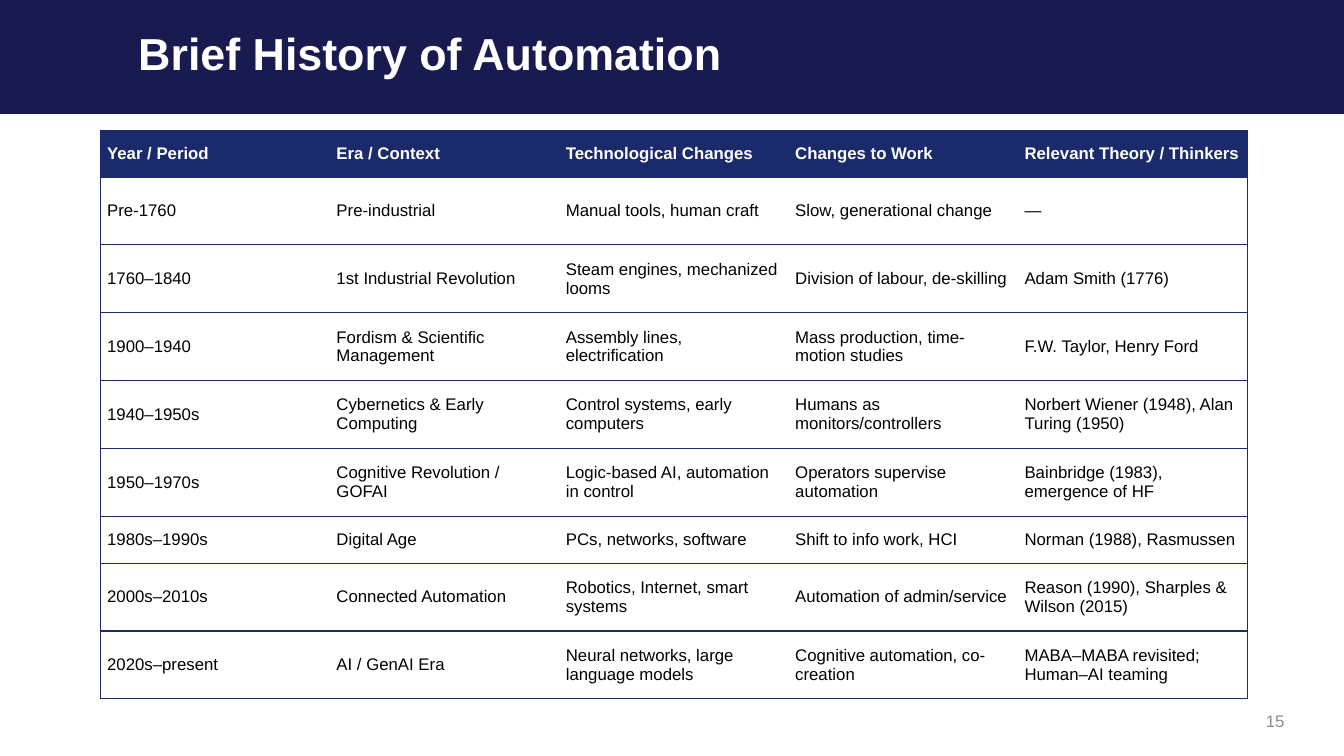
import pptx
import pptx.dml.color
import pptx.enum.shapes
import pptx.enum.text
import pptx.oxml.ns
import pptx.util
from lxml import etree

Cm = pptx.util.Cm
Pt = pptx.util.Pt
ALIGN = pptx.enum.text.PP_ALIGN
MIDDLE = pptx.enum.text.MSO_ANCHOR.MIDDLE
qn = pptx.oxml.ns.qn

NAVY, BLUE, WHITE, BLACK, GREY = "191A4F", "1B2A6B", "FFFFFF", "000000", "8C8C8C"
WIDTH, HEIGHT, BAND = Cm(33.87), Cm(19.05), Cm(2.87)
WIDE, SHORT, TALL = Cm(5.78), Cm(1.18), Cm(1.71)

ROWS = [
    ("Year / Period", "Era / Context", "Technological Changes",
     "Changes to Work", "Relevant Theory / Thinkers"),
    ("Pre-1760", "Pre-industrial", "Manual tools, human craft",
     "Slow, generational change", "—"),
    ("1760–1840", "1st Industrial Revolution", "Steam engines, mechanized looms",
     "Division of labour, de-skilling", "Adam Smith (1776)"),
    ("1900–1940", "Fordism & Scientific Management", "Assembly lines, electrification",
     "Mass production, time-motion studies", "F.W. Taylor, Henry Ford"),
    ("1940–1950s", "Cybernetics & Early Computing", "Control systems, early computers",
     "Humans as monitors/controllers", "Norbert Wiener (1948), Alan Turing (1950)"),
    ("1950–1970s", "Cognitive Revolution / GOFAI", "Logic-based AI, automation in control",
     "Operators supervise automation", "Bainbridge (1983), emergence of HF"),
    ("1980s–1990s", "Digital Age", "PCs, networks, software",
     "Shift to info work, HCI", "Norman (1988), Rasmussen"),
    ("2000s–2010s", "Connected Automation", "Robotics, Internet, smart systems",
     "Automation of admin/service", "Reason (1990), Sharples & Wilson (2015)"),
    ("2020s–present", "AI / GenAI Era", "Neural networks, large language models",
     "Cognitive automation, co-creation", "MABA–MABA revisited; Human–AI teaming"),
]
SHORT_ROWS = (0, 6)


def apply(item, values):
    for name, value in values.items():
        setattr(item, name, value)


def paint(fill, shade):
    fill.solid()
    fill.fore_color.rgb = pptx.dml.color.RGBColor.from_string(shade)


def write(frame, text, size, shade, bold=False, **form):
    frame.text = text
    line = frame.paragraphs[0]
    apply(line, form)
    font = line.runs[0].font
    apply(font, {"name": "Arial", "size": Pt(size), "bold": bold})
    paint(font.fill, shade)


def add_band(slide):
    band = slide.shapes.add_shape(
        pptx.enum.shapes.MSO_SHAPE.RECTANGLE, 0, 0, WIDTH, BAND)
    band.shadow.inherit = False
    paint(band.fill, NAVY)
    band.line.fill.background()
    slide.shapes.title.element.addprevious(band.element)


def add_title(slide, text):
    title = slide.shapes.title
    apply(title, {"left": Cm(3.23), "top": Cm(-0.03),
                  "width": Cm(29.39), "height": BAND})
    apply(title.text_frame, {"vertical_anchor": MIDDLE, "word_wrap": True,
                             "auto_size": pptx.enum.text.MSO_AUTO_SIZE.NONE})
    write(title.text_frame, text, 32, WHITE, True,
          alignment=ALIGN.LEFT, line_spacing=0.9)


def add_number(slide, text):
    box = slide.shapes.add_textbox(Cm(24.54), Cm(17.65), Cm(8.08), Cm(1.02))
    apply(box.text_frame, {"vertical_anchor": MIDDLE, "word_wrap": True})
    write(box.text_frame, text, 12, GREY, alignment=ALIGN.RIGHT)


def add_edge(props, side, shown):
    edge = etree.SubElement(props, qn("a:ln" + side), w=str(Pt(1)))
    if shown:
        fill = etree.SubElement(edge, qn("a:solidFill"))
        etree.SubElement(fill, qn("a:srgbClr"), val=BLUE)
    else:
        etree.SubElement(edge, qn("a:noFill"))


def add_grid(slide, rows):
    count = len(rows[0])
    frame = slide.shapes.add_table(len(rows), count, Cm(2.54), Cm(3.28),
                                   WIDE * count, SHORT * len(rows))
    table = frame.table
    apply(table, {"first_row": False, "horz_banding": False})
    for col in table.columns:
        col.width = WIDE
    for index, row in enumerate(table.rows):
        row.height = SHORT if index in SHORT_ROWS else TALL
    nodes = frame.element.iter(qn("a:tc"))
    for index, (cell, node) in enumerate(zip(table.iter_cells(), nodes)):
        row, col = divmod(index, count)
        head = row == 0
        props = node.get_or_add_tcPr()
        sides = {"L": col == 0, "R": col == count - 1, "T": True, "B": True}
        for side, shown in sides.items():
            add_edge(props, side, shown)
        paint(cell.fill, BLUE if head else WHITE)
        apply(cell, {"vertical_anchor": MIDDLE,
                     "margin_left": Cm(0.16), "margin_right": Cm(0.16),
                     "margin_top": Cm(0.08), "margin_bottom": Cm(0.08)})
        write(cell.text_frame, rows[row][col], 12, WHITE if head else BLACK, head)


def main():
    deck = pptx.Presentation()
    apply(deck, {"slide_width": WIDTH, "slide_height": HEIGHT})
    slide = deck.slides.add_slide(deck.slide_layouts[5])
    add_band(slide)
    add_title(slide, "Brief History of Automation")
    add_number(slide, "15")
    add_grid(slide, ROWS)
    deck.save("out.pptx")


if __name__ == "__main__":
    main()
